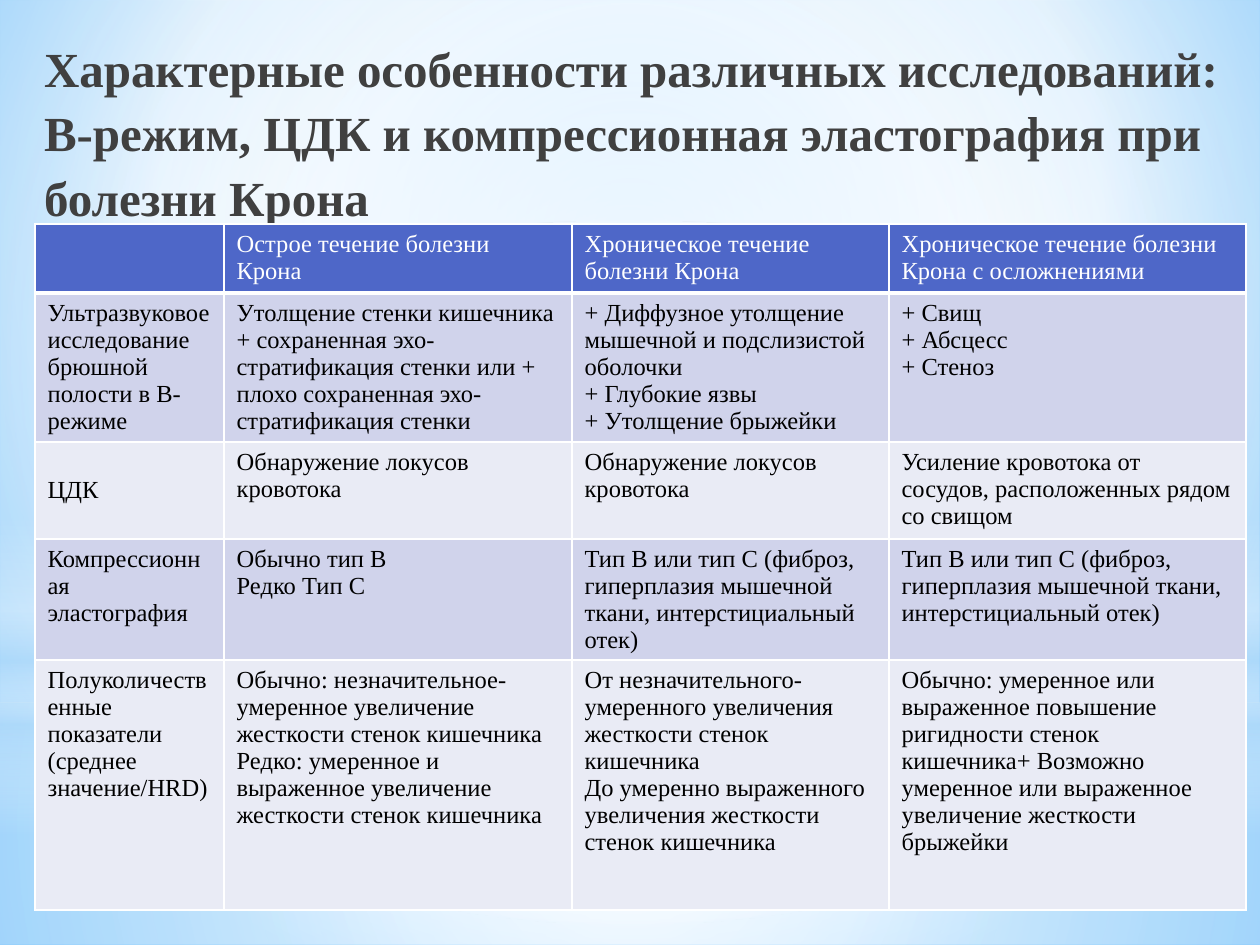
from lxml.etree import SubElement
from pptx import Presentation
from pptx.dml.color import RGBColor
from pptx.enum.shapes import MSO_SHAPE
from pptx.enum.text import MSO_ANCHOR, MSO_AUTO_SIZE, PP_ALIGN
from pptx.oxml.ns import qn
from pptx.util import Pt

EMU_PER_PX = 914400 / 126
SLIDE_WIDTH, SLIDE_HEIGHT = 1260, 945
FONT = "Times New Roman"
COLORS = {
    "white": "FFFFFF", "black": "000000", "title": "404040",
    "sky": "9ED5FF", "azure": "5BB9FF", "mist": "B4DCFA",
    "header": "4E67C8", "odd_row": "D0D3EB", "even_row": "E9EBF5",
}


def px(length):
    return round(length * EMU_PER_PX)


def rgb(color):
    return RGBColor.from_string(COLORS[color])


def set_gradient(fill, owner, stops, focus=None):
    """Stops are (position, color, opacity) in percent; focus makes it circular, else vertical."""
    fill.gradient()
    gradient = owner.find(".//" + qn("a:gradFill"))
    for child in list(gradient):
        gradient.remove(child)
    stop_list = SubElement(gradient, qn("a:gsLst"))
    for position, color, opacity in stops:
        stop = SubElement(stop_list, qn("a:gs"), pos=str(position * 1000))
        tone = SubElement(stop, qn("a:srgbClr"), val=COLORS[color])
        if opacity < 100:
            SubElement(tone, qn("a:alpha"), val=str(opacity * 1000))
    if focus:
        circle = SubElement(gradient, qn("a:path"), path="circle")
        edges = {side: str(inset * 1000) for side, inset in zip("ltrb", focus)}
        SubElement(circle, qn("a:fillToRect"), **edges)
    else:
        SubElement(gradient, qn("a:lin"), ang="5400000", scaled="0")


def set_borders(cell, bottom_width):
    properties = cell._tc.get_or_add_tcPr()
    for side in "LRTB":
        width = bottom_width if side == "B" else 1
        line = SubElement(properties, qn(f"a:ln{side}"), w=str(Pt(width)))
        SubElement(SubElement(line, qn("a:solidFill")), qn("a:srgbClr"), val=COLORS["white"])


class SlideBuilder:
    """Holds the shared text style and the current slide."""

    def __init__(self, slide):
        self.slide = slide

    def style(self, paragraph, size, color, bold=False):
        font = paragraph.font
        font.name, font.size, font.bold = FONT, Pt(size), bold
        font.color.rgb = rgb(color)

    def background(self, stops, focus):
        set_gradient(self.slide.background.fill, self.slide.element, stops, focus)

    def glow(self, kind, top, height, stops, focus=None):
        """Full-width translucent gradient."""
        shape = self.slide.shapes.add_shape(kind, 0, px(top), px(SLIDE_WIDTH), px(height))
        shape.shadow.inherit = False
        shape.line.fill.background()
        set_gradient(shape.fill, shape.element, stops, focus)

    def title(self, text, left, top, width, height):
        title = self.slide.shapes.title
        title.left, title.top, title.width, title.height = map(px, (left, top, width, height))
        title.element.getparent().append(title.element)  # in front of the glows
        frame = title.text_frame
        frame.text = text
        frame.word_wrap = True
        frame.auto_size = MSO_AUTO_SIZE.NONE
        frame.vertical_anchor = MSO_ANCHOR.TOP
        frame.margin_left = px(19)
        paragraph = frame.paragraphs[0]
        paragraph.alignment = PP_ALIGN.LEFT
        paragraph.line_spacing = 1.1
        paragraph.space_before, paragraph.space_after = Pt(0), Pt(3)
        self.style(paragraph, 28, "title", bold=True)

    def table(self, rows, left, top, widths, heights):
        table = self.slide.shapes.add_table(
            len(rows), len(widths), px(left), px(top), px(sum(widths)), px(sum(heights))
        ).table
        for column, width in zip(table.columns, widths):
            column.width = px(width)
        for row, height in zip(table.rows, heights):
            row.height = px(height)
        for r, texts in enumerate(rows):
            fill = "header" if r == 0 else "odd_row" if r % 2 else "even_row"
            for c, text in enumerate(texts):
                cell = table.cell(r, c)
                cell.text = text
                set_borders(cell, 3 if r == 0 else 1)
                cell.fill.solid()
                cell.fill.fore_color.rgb = rgb(fill)
                for paragraph in cell.text_frame.paragraphs:
                    self.style(paragraph, 14, "black" if r else "white")
        return table


FINDINGS = [
    ["", "Острое течение болезни Крона", "Хроническое течение болезни Крона",
     "Хроническое течение болезни Крона с осложнениями"],
    ["Ультразвуковое исследование брюшной полости в B-режиме",
     "Утолщение стенки кишечника + сохраненная эхо-стратификация стенки или + "
     "плохо сохраненная эхо-стратификация стенки",
     "+ Диффузное утолщение мышечной и подслизистой оболочки\n+ Глубокие язвы\n"
     "+ Утолщение брыжейки",
     "+ Свищ\n+ Абсцесс\n+ Стеноз"],
    ["ЦДК", "Обнаружение локусов кровотока", "Обнаружение локусов кровотока",
     "Усиление кровотока от сосудов, расположенных рядом со свищом"],
    ["Компрессионная эластография", "Обычно тип B\nРедко Тип C"]
    + ["Тип В или тип С (фиброз, гиперплазия мышечной ткани, интерстициальный отек)"] * 2,
    ["Полуколичественные показатели (среднее значение/HRD)",
     "Обычно: незначительное-умеренное увеличение жесткости стенок кишечника\n"
     "Редко: умеренное и выраженное увеличение жесткости стенок кишечника",
     "От незначительного-умеренного увеличения жесткости стенок кишечника\n"
     "До умеренно выраженного увеличения жесткости стенок кишечника",
     "Обычно: умеренное или выраженное повышение ригидности стенок кишечника+ "
     "Возможно умеренное или выраженное увеличение жесткости брыжейки"],
]


def main():
    presentation = Presentation()
    presentation.slide_width, presentation.slide_height = px(SLIDE_WIDTH), px(SLIDE_HEIGHT)
    builder = SlideBuilder(presentation.slides.add_slide(presentation.slide_layouts[5]))

    center = (50, 50, 50, 50)
    builder.background([(0, "sky", 100), (60, "white", 100), (100, "azure", 100)],
                       (20, 10, 20, 60))
    builder.glow(MSO_SHAPE.RECTANGLE, 703, 242,
                 [(0, "white", 91), (37, "white", 76), (100, "mist", 79)], center)
    builder.glow(MSO_SHAPE.RECTANGLE, 0, 703,
                 [(0, "white", 89), (48, "white", 62), (100, "mist", 79)], center)
    builder.glow(MSO_SHAPE.RECTANGLE, 519, 315,
                 [(0, "white", 0), (29, "white", 30), (45, "mist", 40),
                  (55, "white", 26), (65, "mist", 60), (100, "white", 0)])
    builder.glow(MSO_SHAPE.OVAL, 221, 703, [(0, "white", 100), (56, "white", 0)], center)

    builder.title("Характерные особенности различных исследований: В-режим, ЦДК и "
                  "компрессионная эластография при болезни Крона", 25, 26, 1235, 149)
    findings = builder.table(FINDINGS, 35, 224, [189, 348, 317, 357], [69, 149, 97, 120, 250])
    findings.cell(2, 0).vertical_anchor = MSO_ANCHOR.MIDDLE

    presentation.save("out.pptx")


if __name__ == "__main__":
    main()
